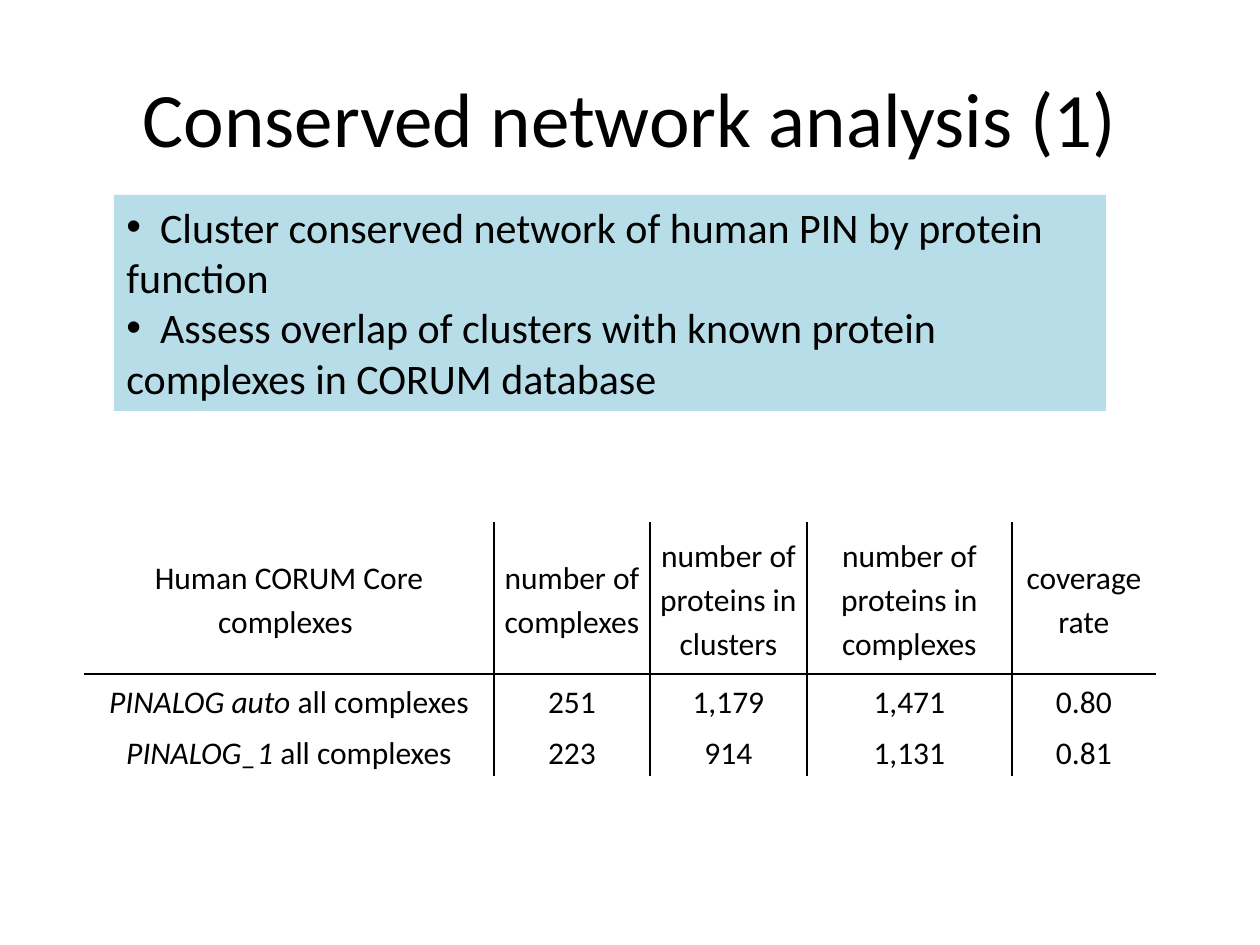
from lxml.etree import SubElement
from pptx import Presentation
from pptx.dml.color import RGBColor
from pptx.enum.shapes import MSO_SHAPE
from pptx.enum.text import MSO_ANCHOR, PP_ALIGN
from pptx.oxml.ns import qn
from pptx.util import Emu, Pt

BLACK = RGBColor(0x00, 0x00, 0x00)
PALE_BLUE = RGBColor(0xB7, 0xDE, 0xE8)
FONT = "Calibri"

TITLE = "Conserved network analysis (1)"
STEPS = [
    "  Cluster conserved network of human PIN by protein function",
    "  Assess overlap of clusters with known protein complexes in CORUM database",
]
HEADER = ["Human CORUM Core complexes ", "number of complexes",
          "number of proteins in clusters", "number of proteins in complexes",
          "coverage rate"]
METHODS = [
    [("PINALOG auto ", "all complexes"), "251", "1,179", "1,471", "0.80"],
    [("PINALOG_1", " all complexes"), "223", "914", "1,131", "0.81"],
]
COL_WIDTHS = [410, 156, 157, 205, 144]
ROW_HEIGHTS = [152, 51, 51]


def px(n):
    return Emu(round(n * 914400 / 126))


def box(*lengths):
    return [px(n) for n in lengths]


def style(p, size, align=PP_ALIGN.LEFT):
    p.alignment = align
    for r in p.runs:
        r.font.name = FONT
        r.font.size = Pt(size)
        r.font.color.rgb = BLACK


def add_title(s):
    tf = s.shapes.add_textbox(*box(63, 38, 1134, 158)).text_frame
    tf.word_wrap = True
    tf.vertical_anchor = MSO_ANCHOR.MIDDLE
    tf.text = TITLE
    style(tf.paragraphs[0], 44, PP_ALIGN.CENTER)


def add_steps(s):
    sp = s.shapes.add_shape(MSO_SHAPE.RECTANGLE, *box(114, 195, 992, 216))
    sp.shadow.inherit = False
    sp.fill.solid()
    sp.fill.fore_color.rgb = PALE_BLUE
    sp.line.fill.background()
    tf = sp.text_frame
    tf.word_wrap = True
    tf.vertical_anchor = MSO_ANCHOR.TOP
    tf.text = "\n".join(STEPS)
    for p in tf.paragraphs:
        style(p, 24)
        pPr = p._p.get_or_add_pPr()
        SubElement(pPr, qn("a:buFont"), typeface="Arial")
        SubElement(pPr, qn("a:buChar"), char="•")


def set_borders(cell, sides):
    tcPr = cell._tc.get_or_add_tcPr()
    for side in "LRTB":
        ln = SubElement(tcPr, qn(f"a:ln{side}"), w=str(Pt(1)))
        if side in sides:
            fill = SubElement(ln, qn("a:solidFill"))
            SubElement(fill, qn("a:srgbClr"), val=str(BLACK))
        else:
            SubElement(ln, qn("a:noFill"))


def fill_cell(cell, content):
    parts = (content,) if isinstance(content, str) else content
    p = cell.text_frame.paragraphs[0]
    for part in parts:
        p.add_run().text = part
    style(p, 18, PP_ALIGN.CENTER)
    p.runs[0].font.italic = len(parts) > 1
    p.line_spacing = 1.15
    cell.vertical_anchor = MSO_ANCHOR.MIDDLE
    cell.margin_left = cell.margin_right = px(9)
    cell.margin_top = cell.margin_bottom = 0


def add_results(s):
    rows = [HEADER] + METHODS
    frame = s.shapes.add_table(len(rows), len(HEADER), *box(
        84, 522, sum(COL_WIDTHS), sum(ROW_HEIGHTS)))
    table = frame.table
    table.first_row = table.horz_banding = False
    for col, width in zip(table.columns, COL_WIDTHS):
        col.width = px(width)
    for row, height in zip(table.rows, ROW_HEIGHTS):
        row.height = px(height)
    last = len(HEADER) - 1
    for i, row in enumerate(rows):
        for j, content in enumerate(row):
            cell = table.cell(i, j)
            fill_cell(cell, content)
            sides = ("L" if j > 0 else "") + ("R" if j < last else "")
            sides += {0: "B", 1: "T"}.get(i, "")
            set_borders(cell, sides)
            cell.fill.background()


def main():
    prs = Presentation()
    prs.slide_width, prs.slide_height = box(1260, 945)
    s = prs.slides.add_slide(prs.slide_layouts[6])
    add_title(s)
    add_results(s)
    add_steps(s)
    prs.save("out.pptx")


if __name__ == "__main__":
    main()
